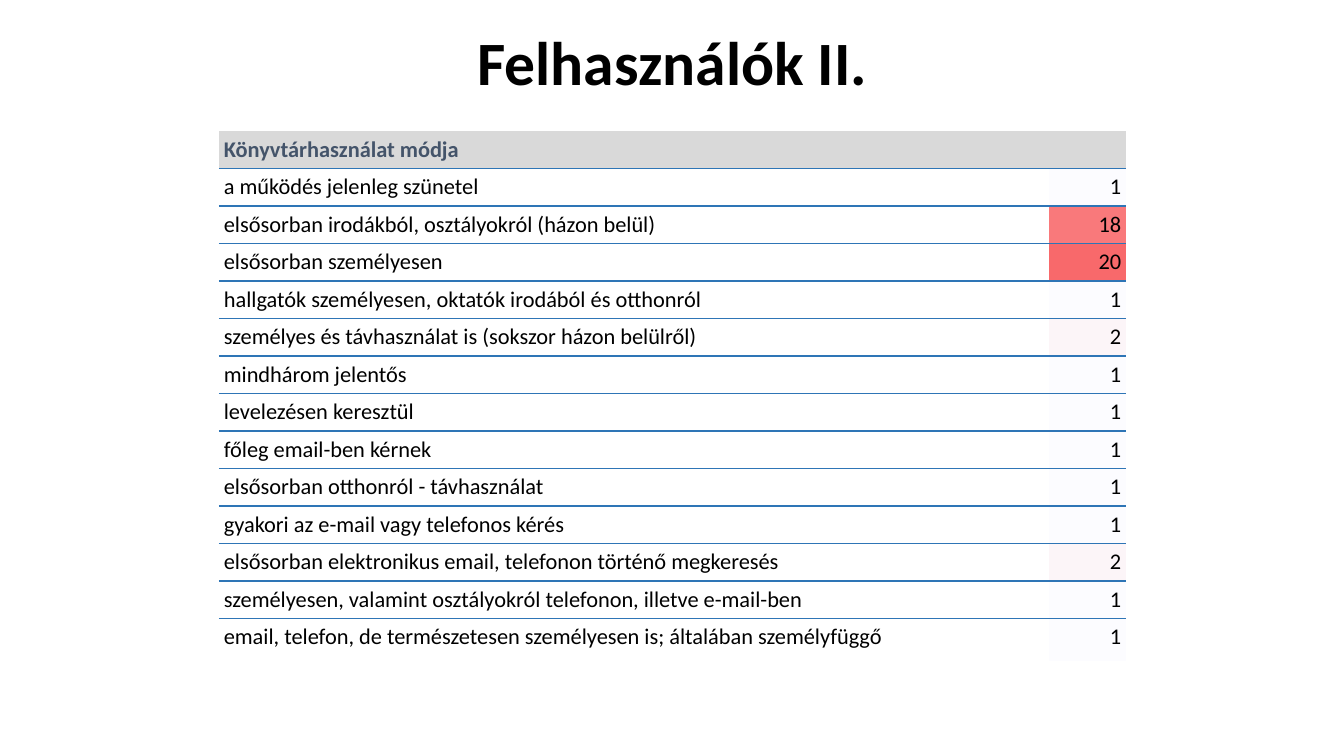
from dataclasses import dataclass
from typing import Any

from pptx import Presentation
from pptx.dml.color import RGBColor as Rgb
from pptx.enum.text import MSO_ANCHOR as Anchor, PP_ALIGN as Align
from pptx.oxml import parse_xml
from pptx.oxml.ns import nsdecls, qn
from pptx.util import Inches, Pt

COLORS = {
    "text": "000000",
    "heading": "44546A",
    "heading_fill": "D9D9D9",
    "rule": "2E75B6",
}
COUNT_FILLS = {1: "FCFCFF", 2: "FCF5F8", 18: "F9797B", 20: "F8696B"}
NO_STYLE = "{2D5ABB26-0587-4C30-8999-92F81FD0307C}"
TITLE_FONT = {"name": "Calibri", "size": Pt(44), "bold": True}
HEADING_FONT = {"name": "Calibri", "size": Pt(16), "bold": True}
ENTRY_FONT = {"name": "Calibri", "size": Pt(16), "bold": False}
CELL_MARGINS = {
    f"margin_{side}": Inches(0.05) for side in ("left", "right", "top", "bottom")
}


@dataclass(frozen=True)
class Usage:
    mode: str
    count: int


USAGES = [
    Usage("a működés jelenleg szünetel", 1),
    Usage("elsősorban irodákból, osztályokról (házon belül)", 18),
    Usage("elsősorban személyesen", 20),
    Usage("hallgatók személyesen, oktatók irodából és otthonról", 1),
    Usage("személyes és távhasználat is (sokszor házon belülről)", 2),
    Usage("mindhárom jelentős", 1),
    Usage("levelezésen keresztül", 1),
    Usage("főleg email-ben kérnek", 1),
    Usage("elsősorban otthonról - távhasználat", 1),
    Usage("gyakori az e-mail vagy telefonos kérés", 1),
    Usage("elsősorban elektronikus email, telefonon történő megkeresés", 2),
    Usage("személyesen, valamint osztályokról telefonon, illetve e-mail-ben", 1),
    Usage("email, telefon, de természetesen személyesen is; általában személyfüggő", 1),
]


def apply_format(target: Any, values: dict[str, Any]) -> None:
    for attribute, value in values.items():
        setattr(target, attribute, value)


def format_font(font: Any, values: dict[str, Any], color: str) -> None:
    apply_format(font, values)
    font.color.rgb = Rgb.from_string(COLORS[color])


def add_rules(cell: Any, edges: str) -> None:
    properties = cell._tc.get_or_add_tcPr()
    for position, edge in enumerate(edges):
        properties.insert(position, parse_xml(
            f'<a:ln{edge} {nsdecls("a")} w="12700"><a:solidFill>'
            f'<a:srgbClr val="{COLORS["rule"]}"/></a:solidFill></a:ln{edge}>'
        ))


def fill_cell(cell: Any, fill: str | None) -> None:
    if fill is None:
        cell.fill.background()
    else:
        cell.fill.solid()
        cell.fill.fore_color.rgb = Rgb.from_string(fill)


def write_entry(cell: Any, text: str, align: Align, fill: str | None, last: bool) -> None:
    cell.text = text
    apply_format(cell, CELL_MARGINS)
    cell.vertical_anchor = Anchor.TOP if last else Anchor.BOTTOM
    paragraph = cell.text_frame.paragraphs[0]
    apply_format(paragraph, {"alignment": align, "space_after": Pt(6)})
    format_font(paragraph.runs[0].font, ENTRY_FONT, "text")
    fill_cell(cell, fill)
    add_rules(cell, "T" if last else "TB")


def write_heading(table: Any, text: str) -> None:
    for cell in table.rows[0].cells:
        fill_cell(cell, COLORS["heading_fill"])
        add_rules(cell, "B")
    heading = table.cell(0, 0)
    heading.merge(table.cell(0, 1))
    heading.text = text
    apply_format(heading, CELL_MARGINS)
    heading.vertical_anchor = Anchor.BOTTOM
    format_font(heading.text_frame.paragraphs[0].runs[0].font, HEADING_FONT, "heading")


def add_title(slide: Any, text: str) -> None:
    title = slide.shapes.title
    apply_format(title, {"left": Inches(0.92), "top": Inches(0),
                         "width": Inches(11.5), "height": Inches(1.3)})
    title.text = text
    title.text_frame.vertical_anchor = Anchor.MIDDLE
    paragraph = title.text_frame.paragraphs[0]
    apply_format(paragraph, {"alignment": Align.CENTER, "line_spacing": 0.9})
    format_font(paragraph.runs[0].font, TITLE_FONT, "text")


def add_usage_table(slide: Any, usages: list[Usage]) -> None:
    table = slide.shapes.add_table(
        len(usages) + 1, 2, Inches(2.17), Inches(1.3), Inches(9), Inches(4.9)
    ).table
    table._tbl.tblPr.find(qn("a:tableStyleId")).text = NO_STYLE
    apply_format(table, {"first_row": False, "horz_banding": False})
    for column, width in zip(table.columns, (8.23, 0.77)):
        column.width = Inches(width)
    for row, height in zip(table.rows, [0.28] + [0.35] * (len(usages) - 1) + [0.42]):
        row.height = Inches(height)
    write_heading(table, "Könyvtárhasználat módja")
    for index, usage in enumerate(usages, start=1):
        last = index == len(usages)
        write_entry(table.cell(index, 0), usage.mode, Align.LEFT, None, last)
        write_entry(table.cell(index, 1), str(usage.count), Align.RIGHT,
                    COUNT_FILLS[usage.count], last)


def main() -> None:
    presentation = Presentation()
    apply_format(presentation, {"slide_width": Inches(13.33), "slide_height": Inches(7.5)})
    slide = presentation.slides.add_slide(presentation.slide_layouts[5])
    add_title(slide, "Felhasználók II.")
    add_usage_table(slide, USAGES)
    presentation.save("out.pptx")


if __name__ == "__main__":
    main()
